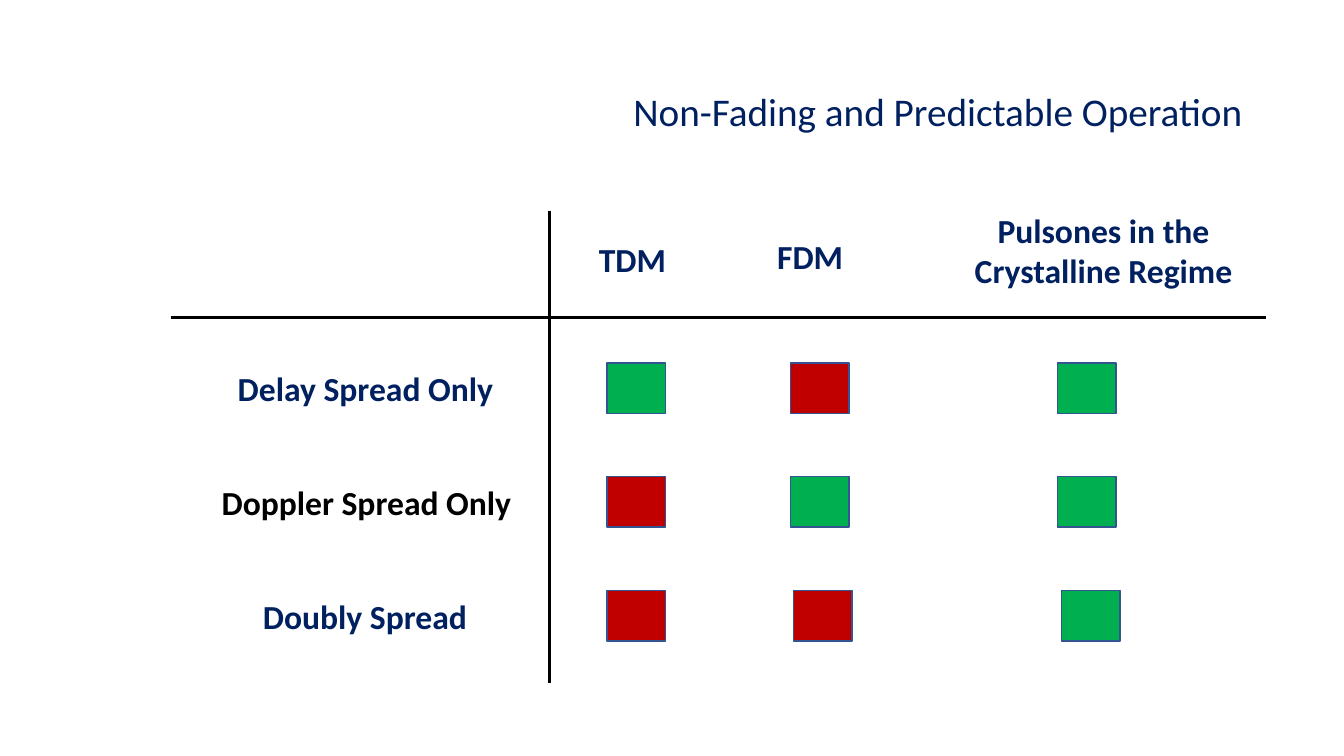
from pptx import Presentation
from pptx.dml.color import RGBColor
from pptx.enum.shapes import MSO_CONNECTOR, MSO_SHAPE
from pptx.enum.text import MSO_ANCHOR, PP_ALIGN
from pptx.oxml.ns import qn
from pptx.util import Inches, Pt
from lxml import etree

RECTANGLE = MSO_SHAPE.RECTANGLE
STRAIGHT = MSO_CONNECTOR.STRAIGHT
LEFT, CENTER, RIGHT = PP_ALIGN.LEFT, PP_ALIGN.CENTER, PP_ALIGN.RIGHT
MIDDLE = MSO_ANCHOR.MIDDLE

FONT = "Calibri"
COLORS = {
    "navy": "002060",
    "black": "000000",
    "good": "00B050",
    "bad": "C00000",
    "outline": "325491",
}

# Headings: text, left, top, width, height, alignment (inside the grid box)
HEADINGS = [
    ("TDM", 4.14, 0.23, 0.95, 0.5, LEFT),
    ("FDM", 5.91, 0.2, 0.9, 0.5, LEFT),
    ("Pulsones in the Crystalline Regime", 7.77, -0.06, 2.95, 0.91, CENTER),
]
# Rows: label, left, width, colour, and the verdict in each column
ROWS = [
    ("Delay Spread Only", 0.56, 2.87, "navy", ("good", "bad", "good")),
    ("Doppler Spread Only", 0.4, 3.19, "black", ("bad", "good", "good")),
    ("Doubly Spread", 0.81, 2.46, "navy", ("bad", "bad", "good")),
]
MARKER_LEFTS = (4.32, 6.14, 8.79)
LAST_ROW_SHIFTS = (0, 0.03, 0.04)
MARKER_WIDTH, ROW_HEIGHT = 0.58, 0.5
FIRST_ROW_TOP, ROW_PITCH = 1.51, 1.13
DIVIDER_LEFT, DIVIDER_TOP = 3.75, 1.06


def color(name):
    return RGBColor.from_string(COLORS[name])


def format_paragraph(paragraph, size, color_name, alignment, bold):
    paragraph.alignment = alignment
    paragraph.font.name = FONT
    paragraph.font.size = Pt(size)
    paragraph.font.bold = bold
    paragraph.font.color.rgb = color(color_name)


def add_title(slide, left, top, width, height):
    title = slide.shapes.title
    title.left, title.top = Inches(left), Inches(top)
    title.width, title.height = Inches(width), Inches(height)
    frame = title.text_frame
    frame.text = "Non-Fading and Predictable Operation"
    frame.vertical_anchor = MIDDLE
    frame.paragraphs[0].line_spacing = 0.9
    format_paragraph(frame.paragraphs[0], 28, "navy", RIGHT, False)


def add_label(slide, text, left, top, width, height, color_name, alignment):
    label = slide.shapes.add_textbox(
        Inches(left), Inches(top), Inches(width), Inches(height))
    frame = label.text_frame
    frame.word_wrap = True
    frame.text = text
    format_paragraph(frame.paragraphs[0], 24, color_name, alignment, True)


def add_marker(slide, left, top, verdict):
    marker = slide.shapes.add_shape(
        RECTANGLE, Inches(left), Inches(top),
        Inches(MARKER_WIDTH), Inches(ROW_HEIGHT))
    marker.shadow.inherit = False
    marker.fill.solid()
    marker.fill.fore_color.rgb = color(verdict)
    marker.line.color.rgb = color("outline")
    marker.line.width = Pt(1)


def add_divider(slide, start_x, start_y, end_x, end_y):
    divider = slide.shapes.add_connector(
        STRAIGHT, Inches(start_x), Inches(start_y),
        Inches(end_x), Inches(end_y))
    divider.line.color.rgb = color("black")
    divider.line.width = Pt(1.75)
    etree.SubElement(divider._element.spPr, qn("a:effectLst"))


def add_comparison_grid(slide, left, top, width, height):
    # Column headings
    for text, x, y, label_width, label_height, alignment in HEADINGS:
        add_label(slide, text, left + x, top + y, label_width, label_height,
                  "navy", alignment)

    # Row labels and verdict markers
    for index, (text, x, label_width, color_name, verdicts) in enumerate(ROWS):
        row_top = top + FIRST_ROW_TOP + index * ROW_PITCH
        add_label(slide, text, left + x, row_top, label_width, ROW_HEIGHT,
                  color_name, LEFT)
        is_last = index == len(ROWS) - 1
        for marker_left, shift, verdict in zip(
                MARKER_LEFTS, LAST_ROW_SHIFTS, verdicts):
            marker_x = left + marker_left + (shift if is_last else 0)
            add_marker(slide, marker_x, row_top, verdict)

    # Crossing divider lines
    add_divider(slide, left, top + DIVIDER_TOP,
                left + width, top + DIVIDER_TOP)
    add_divider(slide, left + DIVIDER_LEFT, top,
                left + DIVIDER_LEFT, top + height)


def main():
    presentation = Presentation()
    presentation.slide_width = Inches(13.33)
    presentation.slide_height = Inches(7.5)
    slide = presentation.slides.add_slide(presentation.slide_layouts[5])
    add_title(slide, 0.92, 0.4, 11.5, 1.45)
    add_comparison_grid(slide, 1.7, 2.09, 10.86, 4.69)
    presentation.save("out.pptx")


if __name__ == "__main__":
    main()
